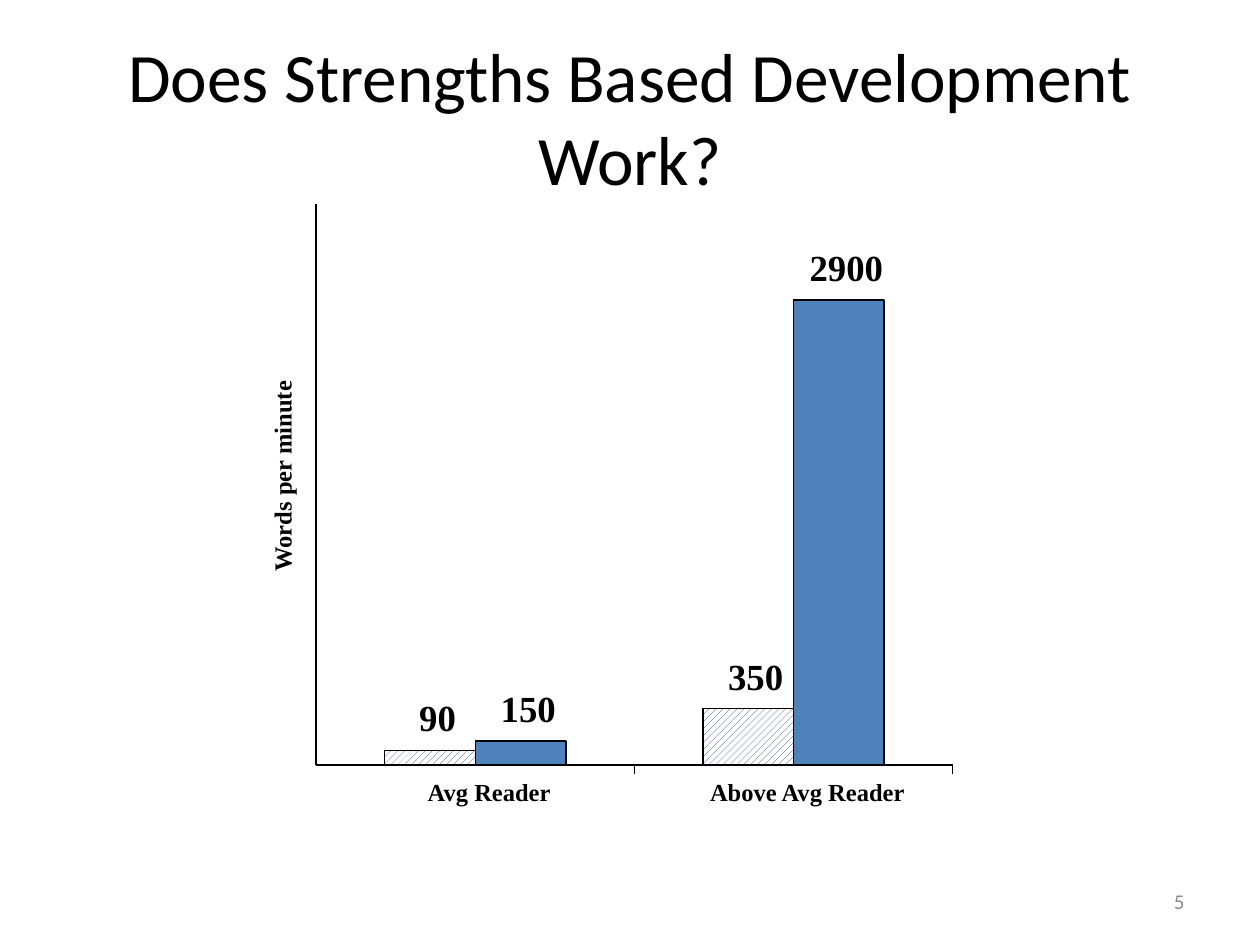
from pptx import Presentation
from pptx.dml.color import RGBColor
from pptx.enum import dml, shapes, text
from pptx.oxml.ns import qn
from pptx.util import Inches, Pt
from lxml import etree

TITLE = "Does Strengths Based Development Work?"
PAGE_NUMBER = "5"
AXIS_TITLE = "Words per minute"
READERS = [("Avg Reader", (90, 150)), ("Above Avg Reader", (350, 2900))]

BLACK = RGBColor(0, 0, 0)
WHITE = RGBColor(255, 255, 255)
NAVY = RGBColor(0x1F, 0x49, 0x7D)
BLUE = RGBColor(0x4F, 0x81, 0xBD)
GRAY = RGBColor(0x8C, 0x8C, 0x8C)

AXIS_LEFT, AXIS_RIGHT, AXIS_TOP, BASELINE = 2.51, 7.56, 1.62, 6.07
SLOT = (AXIS_RIGHT - AXIS_LEFT) / len(READERS)
BAR_WIDTH = 0.72
INCHES_PER_WORD = 3.69 / 2900
TICK = 0.07
LINE_WIDTH = Pt(0.88)
CHART_FONT = {"name": "Times New Roman", "bold": True}


def set_text(shape, content, align, anchor, **font):
    frame = shape.text_frame
    frame.text = content
    frame.vertical_anchor = anchor
    paragraph = frame.paragraphs[0]
    paragraph.alignment = align
    run_font = paragraph.runs[0].font
    run_font.color.rgb = font.pop("color", BLACK)
    for name, value in font.items():
        setattr(run_font, name, value)


def add_label(slide, content, center_x, top, width, height, size, rotation=0):
    """Add a bold chart label without margins, centred on center_x."""
    box = slide.shapes.add_textbox(Inches(center_x - width / 2), Inches(top),
                                   Inches(width), Inches(height))
    box.rotation = rotation
    frame = box.text_frame
    for side in ("left", "top", "right", "bottom"):
        setattr(frame, f"margin_{side}", 0)
    frame.word_wrap = False
    frame.auto_size = text.MSO_AUTO_SIZE.SHAPE_TO_FIT_TEXT
    set_text(box, content, text.PP_ALIGN.CENTER, text.MSO_ANCHOR.TOP,
             size=Pt(size), **CHART_FONT)


def add_line(slide, *points):
    line = slide.shapes.add_connector(shapes.MSO_CONNECTOR.STRAIGHT,
                                      *(Inches(point) for point in points))
    line.line.color.rgb = BLACK
    line.line.width = LINE_WIDTH
    etree.SubElement(line._element.spPr, qn("a:effectLst"))


def add_bar(slide, left, value, hatched):
    height = value * INCHES_PER_WORD
    top = BASELINE - height
    bar = slide.shapes.add_shape(shapes.MSO_SHAPE.RECTANGLE, Inches(left), Inches(top),
                                 Inches(BAR_WIDTH), Inches(height))
    bar.shadow.inherit = False
    bar.line.color.rgb = BLACK
    bar.line.width = LINE_WIDTH
    if hatched:
        bar.fill.patterned()
        bar.fill.pattern = dml.MSO_PATTERN.WIDE_UPWARD_DIAGONAL
        bar.fill.fore_color.rgb = NAVY
        bar.fill.back_color.rgb = WHITE
    else:
        bar.fill.solid()
        bar.fill.fore_color.rgb = BLUE
    label = str(value)
    add_label(slide, label, left + BAR_WIDTH / 2 + 0.06, top - 0.44,
              0.147 * len(label), 0.35, 21)


def main():
    presentation = Presentation()
    presentation.slide_width, presentation.slide_height = Inches(10), Inches(7.5)
    slide = presentation.slides.add_slide(presentation.slide_layouts[5])

    title = slide.shapes.title
    title.left, title.top, title.width, title.height = map(Inches, (0.5, 0.3, 9, 1.25))
    set_text(title, TITLE, text.PP_ALIGN.CENTER, text.MSO_ANCHOR.MIDDLE,
             size=Pt(39.6), name="Calibri")
    number = slide.shapes.add_textbox(*map(Inches, (7.17, 6.95, 2.33, 0.4)))
    set_text(number, PAGE_NUMBER, text.PP_ALIGN.RIGHT, text.MSO_ANCHOR.MIDDLE,
             size=Pt(12), name="Calibri", color=GRAY)

    for index, (reader, values) in enumerate(READERS):
        center = AXIS_LEFT + SLOT * (index + 0.5)
        first_left = center - BAR_WIDTH * len(values) / 2
        for position, value in enumerate(values):
            add_bar(slide, first_left + position * BAR_WIDTH, value, position == 0)
        add_label(slide, reader, center + 0.11, 6.17, 0.098 * len(reader), 0.24, 14)
        tick_x = AXIS_LEFT + SLOT * (index + 1)
        add_line(slide, tick_x, BASELINE + TICK, tick_x, BASELINE)

    add_line(slide, AXIS_LEFT, AXIS_TOP, AXIS_LEFT, BASELINE)
    add_line(slide, AXIS_LEFT, BASELINE, AXIS_RIGHT, BASELINE)
    add_label(slide, AXIS_TITLE, 2.24, 3.66, 1.52, 0.24, 14, rotation=270)
    presentation.save("out.pptx")


if __name__ == "__main__":
    main()
